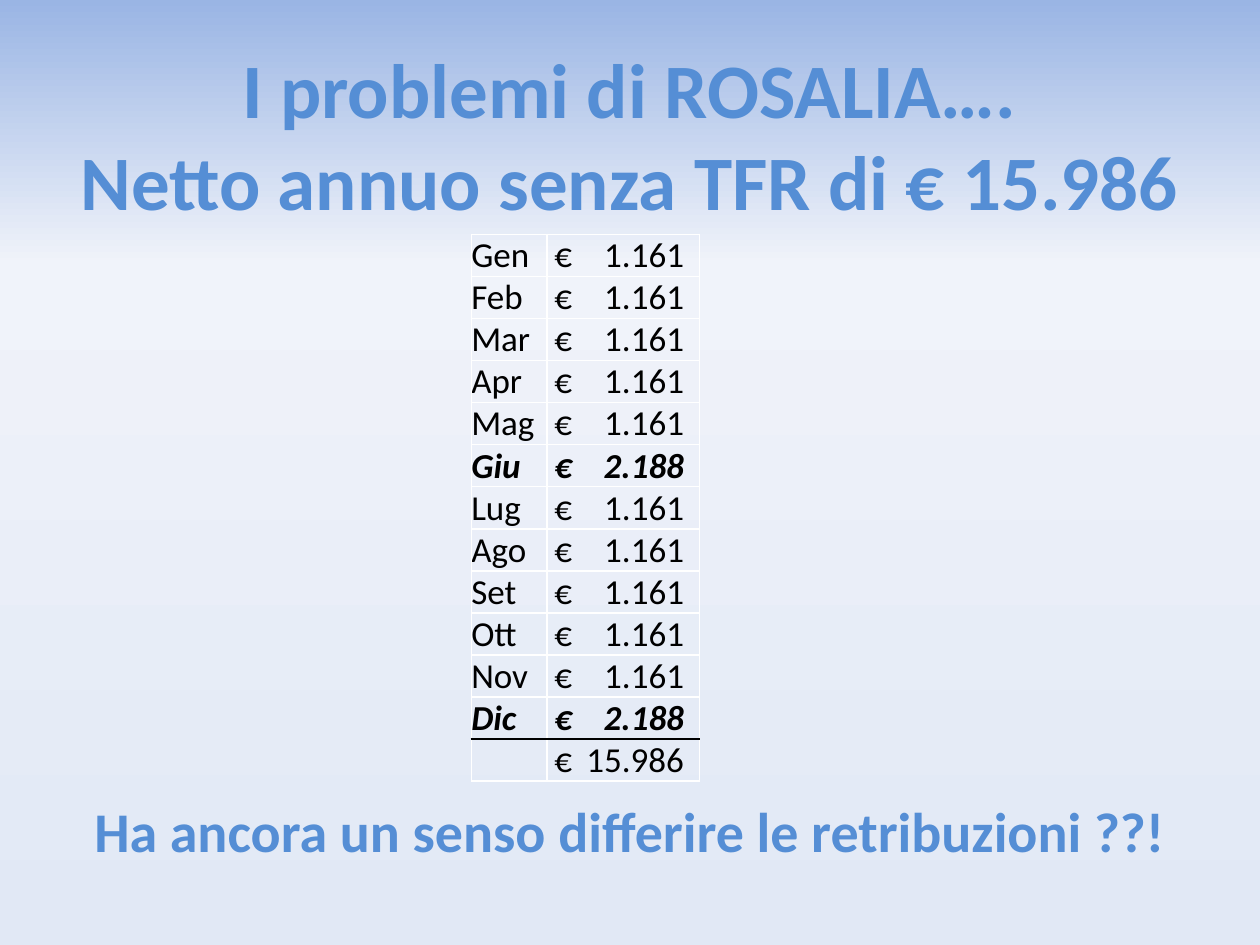
from dataclasses import dataclass
from lxml.etree import SubElement as Sub
from pptx import Presentation
from pptx.dml.color import RGBColor as Rgb
from pptx.enum.text import MSO_ANCHOR as Anchor, PP_ALIGN as Align
from pptx.oxml.ns import qn
from pptx.util import Inches, Pt

HUES = {
    "sky": "9AB5E4", "mist": "F0F3FA", "haze": "E1E8F5",
    "title": "558ED5", "edge": "054697", "grid": "FFFFFF", "ink": "000000",
}
FONT = "Calibri"


@dataclass
class Banner:
    top: float
    height: float
    size: int
    lines: tuple[str, ...]


@dataclass
class Month:
    name: str
    pay: str
    extra: bool = False
    anchor: Anchor = Anchor.BOTTOM


BANNERS = [
    Banner(0.28, 1.58, 44, ("I problemi di ROSALIA….", "Netto annuo senza TFR di € 15.986")),
    Banner(6.27, 0.64, 32, ("Ha ancora un senso differire le retribuzioni ??!",)),
]
BASE, DOUBLE = "1.161", "2.188"
MONTHS = [
    *(Month(name, BASE) for name in ("Gen", "Feb", "Mar", "Apr", "Mag")),
    Month("Giu", DOUBLE, True, Anchor.MIDDLE),
    Month("Lug", BASE, False, Anchor.MIDDLE),
    *(Month(name, BASE) for name in ("Ago", "Set", "Ott", "Nov")),
    Month("Dic", DOUBLE, True),
    Month("", "15.986"),
]


def add_solid(parent, hue: str) -> None:
    fill = Sub(parent, qn("a:solidFill"))
    Sub(fill, qn("a:srgbClr"), val=HUES[hue])


def paint_back(slide) -> None:
    fill = slide.background.fill
    fill.gradient()
    fill.gradient_angle = 270
    stops = next(slide.element.iter(qn("a:gsLst")))
    for stop in list(stops):
        stops.remove(stop)
    for place, hue in ((0, "sky"), (28, "mist"), (100, "haze")):
        stop = Sub(stops, qn("a:gs"), pos=str(place * 1000))
        Sub(stop, qn("a:srgbClr"), val=HUES[hue])


def add_run(para, text: str, size: int, hue: str, bold: bool = False, slant: bool = False):
    run = para.add_run()
    run.text = text
    font = run.font
    font.name, font.size = FONT, Pt(size)
    font.bold, font.italic = bold, slant
    font.color.rgb = Rgb.from_string(HUES[hue])
    return run


def add_banner(slide, banner: Banner) -> None:
    box = slide.shapes.add_textbox(0, Inches(banner.top), Inches(10), Inches(banner.height))
    frame = box.text_frame
    frame.word_wrap = True
    for index, line in enumerate(banner.lines):
        para = frame.add_paragraph() if index else frame.paragraphs[0]
        para.alignment = Align.CENTER
        run = add_run(para, line, banner.size, "title", bold=True)
        props = run.font.fill and run._r.get_or_add_rPr()
        edge = props.makeelement(qn("a:ln"), {"w": str(Pt(1))})
        props.insert(0, edge)
        add_solid(edge, "edge")


def style_cell(cell, anchor: Anchor, left: float, top: str, bottom: str) -> None:
    cell.margin_left = Inches(left)
    cell.margin_right = cell.margin_top = cell.margin_bottom = 0
    cell.vertical_anchor = anchor
    props = cell._tc.get_or_add_tcPr()
    for side, hue in (("L", "grid"), ("R", "grid"), ("T", top), ("B", bottom)):
        line = Sub(props, qn(f"a:ln{side}"), w=str(Pt(1)))
        add_solid(line, hue)
    cell.fill.background()


def add_tab(para, place: float) -> None:
    tabs = Sub(para._p.get_or_add_pPr(), qn("a:tabLst"))
    Sub(tabs, qn("a:tab"), pos=str(Inches(place)), algn="r")


def add_months(slide) -> None:
    count = len(MONTHS)
    frame = slide.shapes.add_table(
        count, 2, Inches(3.74), Inches(1.86), Inches(1.81), Inches(4.33))
    table = frame.table
    table.first_row = table.horz_banding = False
    for column, width in zip(table.columns, (0.6, 1.21)):
        column.width = Inches(width)
    for index, month in enumerate(MONTHS):
        top = "ink" if index == count - 1 else "grid"
        bottom = "ink" if index == count - 2 else "grid"
        name, pay = table.rows[index].cells
        style_cell(name, month.anchor, 0, top, bottom)
        style_cell(pay, month.anchor, 0.06, top, bottom)
        if month.name:
            add_run(name.text_frame.paragraphs[0], month.name, 20, "ink", month.extra, month.extra)
        para = pay.text_frame.paragraphs[0]
        add_tab(para, 1.03)
        add_run(para, f"€\t{month.pay}", 20, "ink", month.extra, month.extra)


def main() -> None:
    deck = Presentation()
    deck.slide_width, deck.slide_height = Inches(10), Inches(7.5)
    slide = deck.slides.add_slide(deck.slide_layouts[6])
    paint_back(slide)
    add_banner(slide, BANNERS[0])
    add_months(slide)
    add_banner(slide, BANNERS[1])
    deck.save("out.pptx")


if __name__ == "__main__":
    main()
